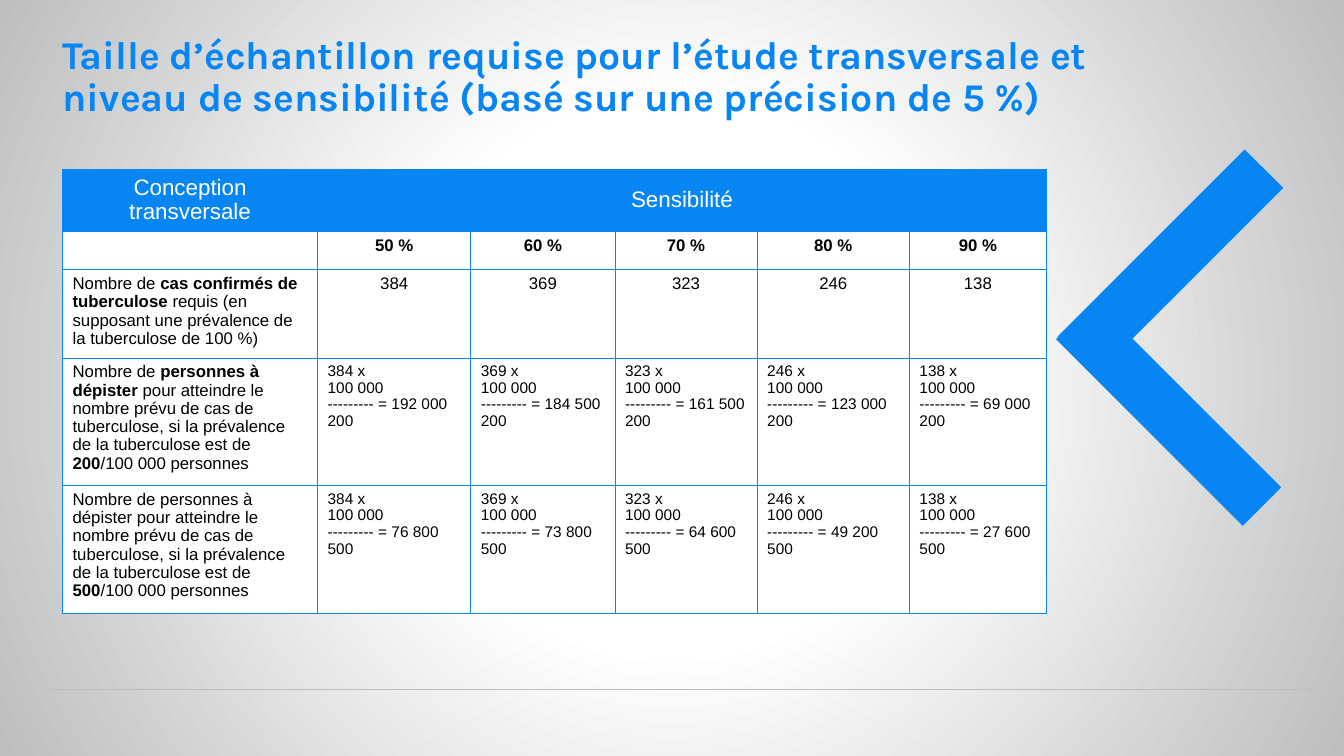
from lxml.etree import SubElement
from pptx import Presentation
from pptx.dml.color import RGBColor
from pptx.enum.shapes import MSO_CONNECTOR, MSO_SHAPE
from pptx.enum.text import MSO_ANCHOR, PP_ALIGN
from pptx.oxml import parse_xml
from pptx.oxml.ns import nsdecls, qn
from pptx.util import Inches, Pt

BLUE, WHITE, BLACK, GREY = "0785F2", "FFFFFF", "000000", "BCBEC0"
COLUMN_WIDTHS = [2.53, 1.52, 1.43, 1.41, 1.51, 1.36]
ROW_HEIGHTS = [0.6, 0.38, 0.85, 1.22, 1.22]
CASES_BY_SENSITIVITY = {50: 384, 60: 369, 70: 323, 80: 246, 90: 138}
POPULATION = 100000
SCREENING_LABELS = {
    200: "Nombre de **personnes à dépister **pour atteindre le nombre prévu de cas de "
         "tuberculose, si la prévalence de la tuberculose est de **200**/100 000 personnes",
    500: "Nombre de personnes à dépister pour atteindre le nombre prévu de cas de "
         "tuberculose, si la prévalence de la tuberculose est de **500**/100 000 personnes",
}


def color(value):
    return RGBColor.from_string(value)


def grouped(number):
    return f"{number:,}".replace(",", " ")


class SlideBuilder:
    def __init__(self, page, font):
        self.page = page
        self.font = font

    def background(self, stops):
        self.page.background.fill.solid()
        properties = self.page._element.xpath(".//p:bgPr")[0]
        marks = "".join(
            f'<a:gs pos="{position * 1000}"><a:srgbClr val="{value}"/></a:gs>'
            for position, value in stops)
        gradient = parse_xml(
            f'<a:gradFill {nsdecls("a")} rotWithShape="1"><a:gsLst>{marks}</a:gsLst>'
            '<a:path path="circle"><a:fillToRect l="50000" t="50000" r="50000" b="50000"/>'
            '</a:path></a:gradFill>')
        properties.replace(properties[0], gradient)

    def line(self, left, right, top):
        rule = self.page.shapes.add_connector(
            MSO_CONNECTOR.STRAIGHT, Inches(left), Inches(top), Inches(right), Inches(top))
        rule.line.color.rgb = color(GREY)
        rule.line.width = Pt(0.75)
        SubElement(rule._element.spPr, qn("a:effectLst"))

    def bar(self, left, top, width, height, rotation):
        bar = self.page.shapes.add_shape(
            MSO_SHAPE.RECTANGLE, Inches(left), Inches(top), Inches(width), Inches(height))
        bar.rotation = rotation
        bar.shadow.inherit = False
        bar.fill.solid()
        bar.fill.fore_color.rgb = color(BLUE)
        bar.line.fill.background()

    def style(self, span, size, value, bold, font=None):
        span.font.name = font or self.font
        span.font.size = Pt(size)
        span.font.bold = bold
        span.font.color.rgb = color(value)

    def title(self, text, left, top, width, height):
        box = self.page.shapes.add_textbox(
            Inches(left), Inches(top), Inches(width), Inches(height))
        frame = box.text_frame
        frame.text = text
        frame.word_wrap = True
        frame.vertical_anchor = MSO_ANCHOR.MIDDLE
        frame.margin_left = frame.margin_right = 0
        para = frame.paragraphs[0]
        para.line_spacing = 0.9
        self.style(para.runs[0], 28, BLUE, True, "Karla")

    def table(self, left, top, widths, heights):
        table = self.page.shapes.add_table(
            len(heights), len(widths), Inches(left), Inches(top),
            Inches(sum(widths)), Inches(sum(heights))).table
        for column, width in zip(table.columns, widths):
            column.width = Inches(width)
        for row, height in zip(table.rows, heights):
            row.height = Inches(height)
        for cell in table.iter_cells():
            self.borders(cell)
            cell.fill.solid()
            cell.fill.fore_color.rgb = color(WHITE)
        return table

    def borders(self, cell):
        properties = cell._tc.get_or_add_tcPr()
        for side in ("lnL", "lnR", "lnT", "lnB"):
            border = SubElement(properties, qn(f"a:{side}"), w=str(Pt(0.75)))
            fill = SubElement(border, qn("a:solidFill"))
            SubElement(fill, qn("a:srgbClr"), val=BLUE)

    def cell(self, cell, text, size=12, value=BLACK, bold=False, align=PP_ALIGN.LEFT):
        cell.text_frame.text = text.replace("**", "")
        for para, line in zip(cell.text_frame.paragraphs, text.split("\n")):
            para.alignment = align
            para.line_spacing = 0.97
            para.text = ""
            for index, part in enumerate(line.split("**")):
                span = para.add_run()
                span.text = part
                self.style(span, size, value, bold or index % 2 == 1)

    def header(self, cell, text):
        self.cell(cell, text, 16, WHITE, align=PP_ALIGN.CENTER)
        cell.vertical_anchor = MSO_ANCHOR.MIDDLE
        cell.fill.solid()
        cell.fill.fore_color.rgb = color(BLUE)


def main():
    deck = Presentation()
    deck.slide_width, deck.slide_height = Inches(13.33), Inches(7.5)
    page = deck.slides.add_slide(deck.slide_layouts[6])
    builder = SlideBuilder(page, "Arial")
    builder.background([(0, WHITE), (35, WHITE), (100, GREY)])
    builder.line(0.49, 13.06, 6.84)
    builder.bar(10.3, 2.33, 2.62, 0.54, 315)
    builder.bar(10.28, 3.83, 2.62, 0.54, 45)
    builder.title(
        "Taille d’échantillon requise pour l’étude transversale et niveau de sensibilité "
        "(basé sur une précision de 5 %)", 0.62, 0.28, 10.96, 0.98)

    table = builder.table(0.62, 1.68, COLUMN_WIDTHS, ROW_HEIGHTS)
    table.cell(0, 1).merge(table.cell(0, 5))
    builder.header(table.cell(0, 0), "Conception transversale")
    builder.header(table.cell(0, 1), "Sensibilité")
    empty = table.cell(1, 0).text_frame.paragraphs[0]
    SubElement(empty._p, qn("a:endParaRPr"), sz="1200")
    builder.cell(table.cell(2, 0),
                 "Nombre de **cas confirmés de tuberculose **requis (en supposant "
                 "une prévalence de la tuberculose de 100 %)")
    for row, label in enumerate(SCREENING_LABELS.values(), 3):
        builder.cell(table.cell(row, 0), label)
    for column, (sensitivity, cases) in enumerate(CASES_BY_SENSITIVITY.items(), 1):
        builder.cell(table.cell(1, column), f"{sensitivity} %", bold=True,
                     align=PP_ALIGN.CENTER)
        builder.cell(table.cell(2, column), str(cases), align=PP_ALIGN.CENTER)
        for row, prevalence in enumerate(SCREENING_LABELS, 3):
            screened = grouped(cases * POPULATION // prevalence)
            builder.cell(
                table.cell(row, column),
                f"{cases} x\n{grouped(POPULATION)}\n--------- = {screened}\n{prevalence}", 11)
    deck.save("out.pptx")


if __name__ == "__main__":
    main()
